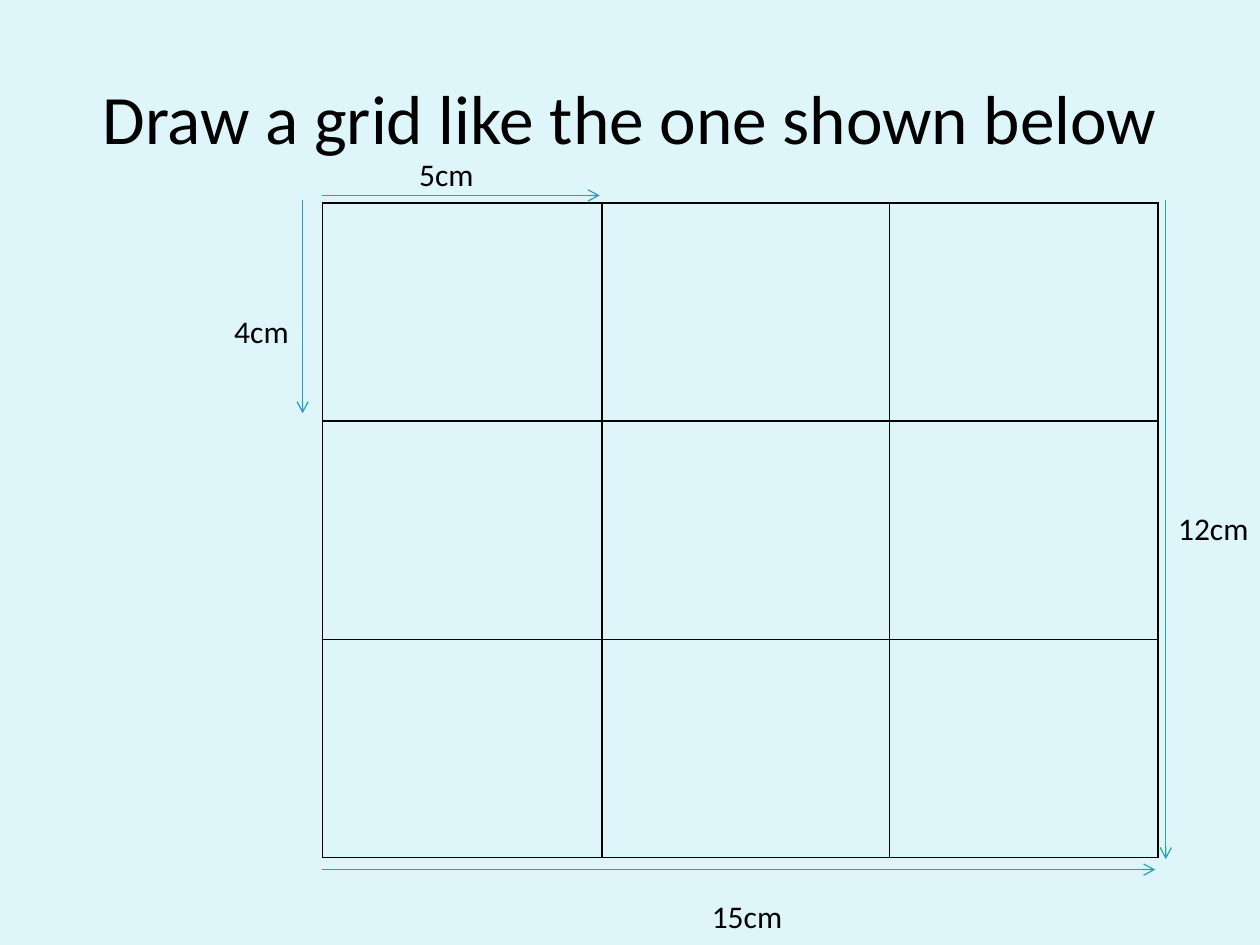
"""Build a slide that shows a three by three grid with its measurements."""
from lxml.etree import SubElement
from pptx import Presentation
from pptx.dml.color import RGBColor
from pptx.enum.shapes import MSO_CONNECTOR
from pptx.enum.text import MSO_ANCHOR, PP_ALIGN
from pptx.oxml.ns import qn
from pptx.util import Cm, Pt

THEME = {
    "background": RGBColor.from_string("DEF5FA"),
    "text": RGBColor.from_string("000000"),
    "arrow": RGBColor.from_string("28A1BE"),
    "border": "000000",
    "font": "Calibri",
    "title_size": Pt(39.6),
    "label_size": Pt(18),
    "arrow_width": Pt(0.75),
    "border_width": Pt(1),
}


def add_text(page, words, place, size, align, anchor):
    box = page.shapes.add_textbox(*map(Cm, place))
    for name, value in {"word_wrap": True, "vertical_anchor": anchor}.items():
        setattr(box.text_frame, name, value)
    para = box.text_frame.paragraphs[0]
    para.alignment = align
    span = para.add_run()
    span.text = words
    for name, value in {"name": THEME["font"], "size": size}.items():
        setattr(span.font, name, value)
    span.font.color.rgb = THEME["text"]


deck = Presentation()
for name, value in {"slide_width": Cm(25.4), "slide_height": Cm(19.05)}.items():
    setattr(deck, name, value)
page = deck.slides.add_slide(deck.slide_layouts[6])
page.background.fill.solid()
page.background.fill.fore_color.rgb = THEME["background"]

add_text(page, "Draw a grid like the one shown below", (1.27, 0.76, 22.86, 3.18),
         THEME["title_size"], PP_ALIGN.CENTER, MSO_ANCHOR.MIDDLE)

column_widths = (5.64, 5.79, 5.41)
row_height, row_count = 4.4, 3
grid_left, grid_top = 6.5, 4.09
grid = page.shapes.add_table(
    row_count, len(column_widths), Cm(grid_left), Cm(grid_top),
    Cm(sum(column_widths)), Cm(row_height * row_count)).table
for name in ("first_row", "horz_banding"):
    setattr(grid, name, False)
for column, width in zip(grid.columns, column_widths):
    column.width = Cm(width)
for row in grid.rows:
    row.height = Cm(row_height)
for cell in grid.iter_cells():
    properties = cell._tc.get_or_add_tcPr()
    for side in ("a:lnL", "a:lnR", "a:lnT", "a:lnB"):
        border = SubElement(properties, qn(side), w=str(THEME["border_width"]))
        fill = SubElement(border, qn("a:solidFill"))
        SubElement(fill, qn("a:srgbClr"), val=THEME["border"])
    cell.fill.background()

measurements = (
    ("5cm", (6.5, 3.94, 12.09, 3.94), (8.2, 3.0, 2.2, 1.02), PP_ALIGN.LEFT),
    ("4cm", (6.1, 4.04, 6.1, 8.33), (3.91, 6.17, 2.16, 1.02), PP_ALIGN.RIGHT),
    ("15cm", (6.5, 17.53, 23.29, 17.53), (14.1, 17.96, 4.4, 1.02), PP_ALIGN.LEFT),
    ("12cm", (23.5, 4.04, 23.5, 17.32), (23.5, 10.13, 2.4, 1.02), PP_ALIGN.LEFT),
)
for words, ends, place, align in measurements:
    arrow = page.shapes.add_connector(MSO_CONNECTOR.STRAIGHT, *map(Cm, ends))
    arrow.line.color.rgb = THEME["arrow"]
    arrow.line.width = THEME["arrow_width"]
    SubElement(arrow.line._get_or_add_ln(), qn("a:tailEnd"), type="arrow")
    SubElement(arrow._element.spPr, qn("a:effectLst"))
    add_text(page, words, place, THEME["label_size"], align, MSO_ANCHOR.TOP)

deck.save("out.pptx")
